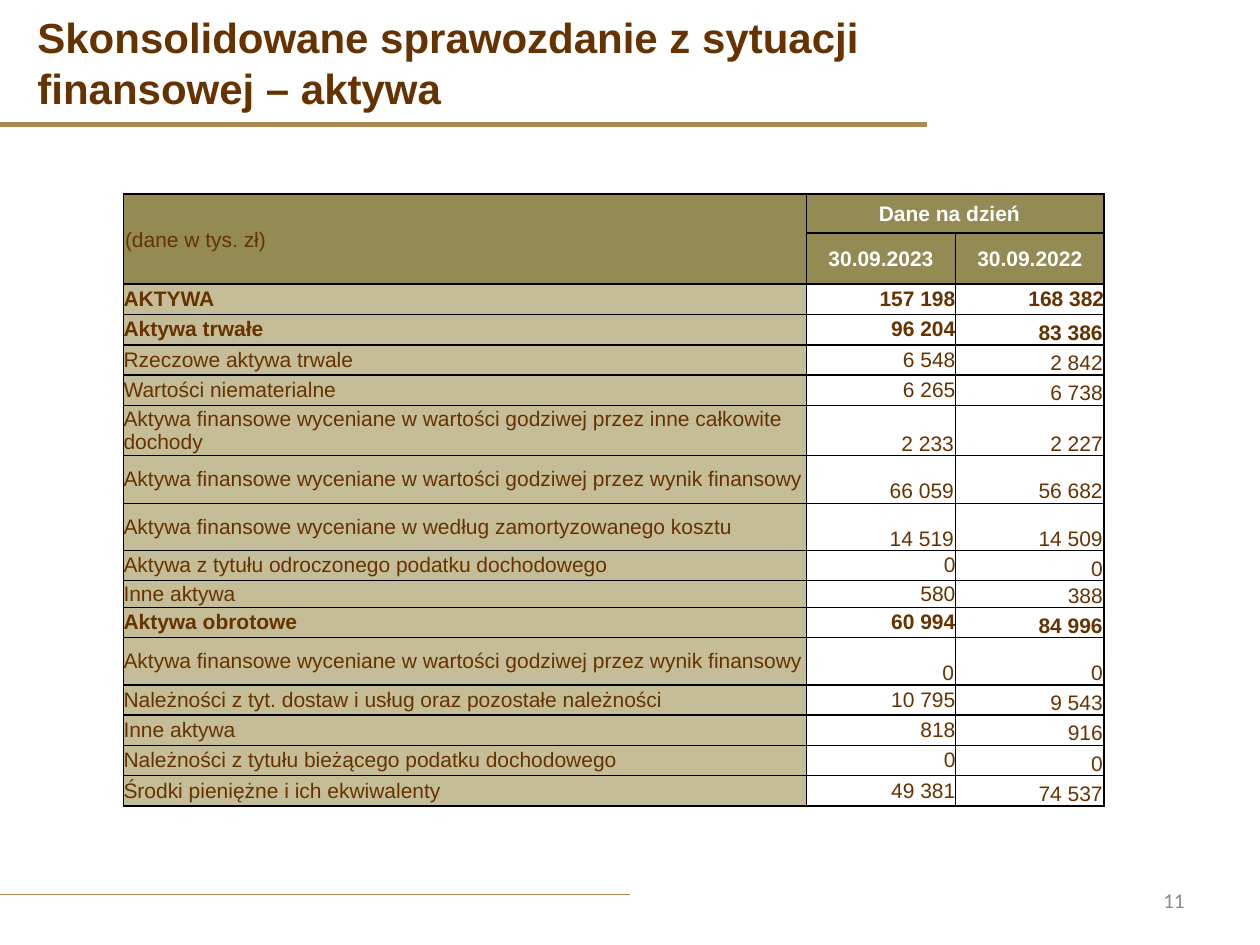
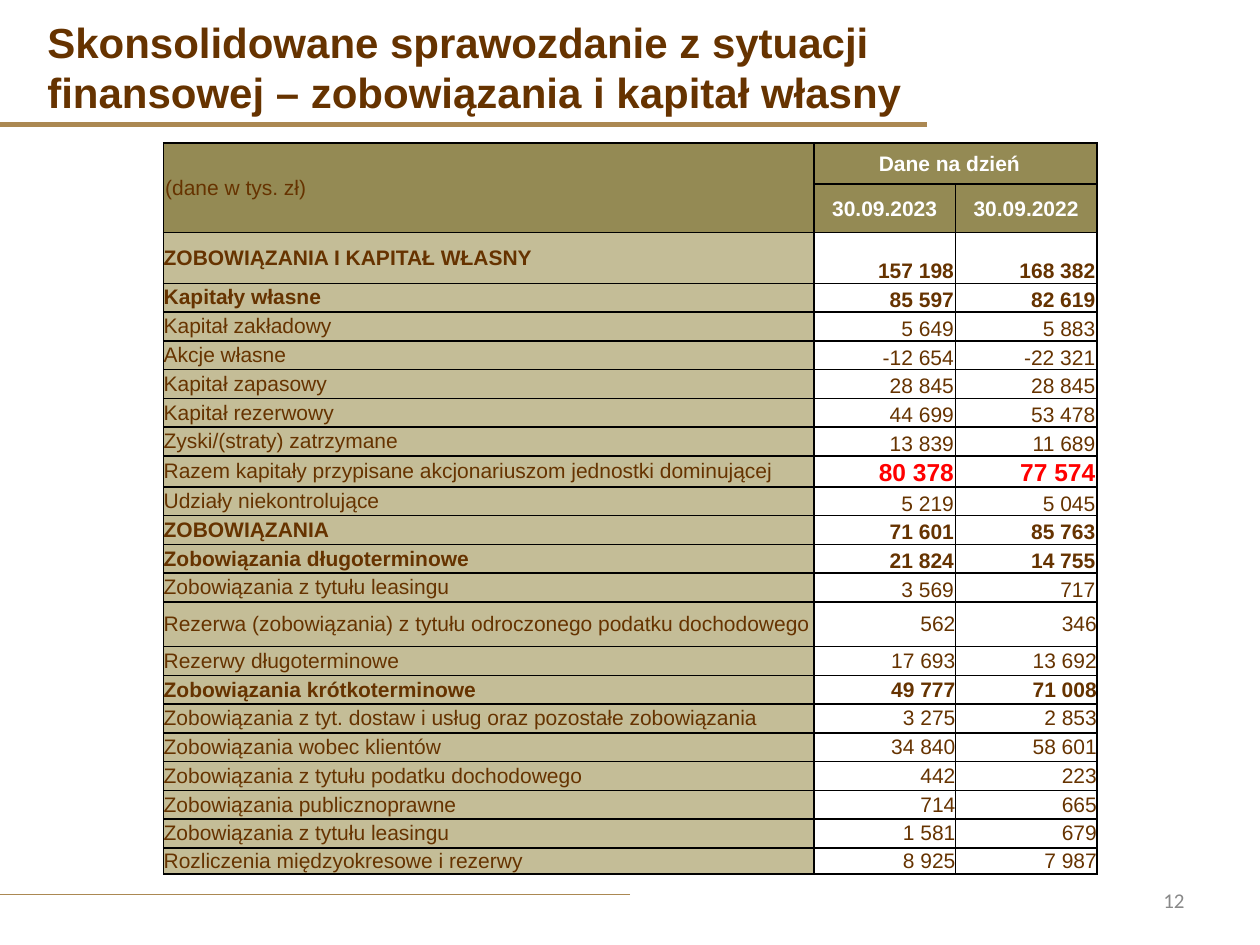
"""Build two slides with the consolidated statement of financial position."""
from dataclasses import dataclass

import pptx
import pptx.dml.color
import pptx.enum.shapes
import pptx.enum.text
import pptx.oxml
import pptx.oxml.ns
import pptx.presentation
import pptx.shapes.autoshape
import pptx.slide
import pptx.table
import pptx.text.text
import pptx.util

Cm = pptx.util.Cm
Pt = pptx.util.Pt
RGBColor = pptx.dml.color.RGBColor
Align = pptx.enum.text.PP_ALIGN
Anchor = pptx.enum.text.MSO_ANCHOR

BROWN = RGBColor(0x66, 0x33, 0x00)
GOLD = RGBColor(0xAB, 0x88, 0x52)
OLIVE = RGBColor(0x94, 0x8A, 0x54)
SAND = RGBColor(0xC4, 0xBD, 0x97)
WHITE = RGBColor(0xFF, 0xFF, 0xFF)
RED = RGBColor(0xFF, 0x00, 0x00)
GREY = RGBColor(0x89, 0x89, 0x89)
BORDER = "000000"

MIDDLE = (Anchor.MIDDLE, Anchor.MIDDLE)
BOTTOM = (Anchor.BOTTOM, Anchor.BOTTOM)
MIXED = (Anchor.MIDDLE, Anchor.BOTTOM)


@dataclass(frozen=True)
class Rule:
    """A horizontal gold line starting at the left slide edge."""
    length: float
    top: float
    weight: float


@dataclass(frozen=True)
class Item:
    """One line of the statement with its values on both dates."""
    label: str
    current: str
    previous: str
    anchors: tuple[Anchor, Anchor]
    bold: bool = False
    height: float | None = None
    highlight: bool = False


@dataclass(frozen=True)
class Statement:
    """One slide: its title, page number, table geometry and items."""
    title: str
    title_box: tuple[float, float, float, float]
    page: str
    left: float
    top: float
    column_widths: tuple[float, float, float]
    header_heights: tuple[float, float]
    item_height: float
    items: list[Item]


RULES = [Rule(18.69, 2.51, 2.5), Rule(12.7, 18.03, 1)]
DATES = ("30.09.2023", "30.09.2022")

ASSETS = Statement(
    "Skonsolidowane sprawozdanie z sytuacji finansowej – aktywa",
    (0.5, 0, 18.2, 2.51), "11", 2.49, 3.91, (13.77, 3, 3), (0.79, 1.03), 0.61,
    [
        Item("AKTYWA", "157 198", "168 382", MIDDLE, bold=True),
        Item("Aktywa trwałe", "96 204", "83 386", MIXED, bold=True),
        Item("Rzeczowe aktywa trwale", "6 548", "2 842", MIXED),
        Item("Wartości niematerialne", "6 265", "6 738", MIXED),
        Item("Aktywa finansowe wyceniane w wartości godziwej przez inne całkowite dochody",
             "2 233", "2 227", BOTTOM, height=0.96),
        Item("Aktywa finansowe wyceniane w wartości godziwej przez wynik finansowy",
             "66 059", "56 682", BOTTOM, height=0.96),
        Item("Aktywa finansowe wyceniane w według zamortyzowanego kosztu",
             "14 519", "14 509", BOTTOM, height=0.95),
        Item("Aktywa z tytułu odroczonego podatku dochodowego", "0", "0", MIXED),
        Item("Inne aktywa", "580", "388", MIXED, height=0.49),
        Item("Aktywa obrotowe", "60 994", "84 996", MIXED, bold=True),
        Item("Aktywa finansowe wyceniane w wartości godziwej przez wynik finansowy",
             "0", "0", BOTTOM, height=0.95),
        Item("Należności z tyt. dostaw i usług oraz pozostałe należności",
             "10 795", "9 543", MIXED),
        Item("Inne aktywa", "818", "916", MIXED),
        Item("Należności z tytułu bieżącego podatku dochodowego", "0", "0", MIXED),
        Item("Środki pieniężne i ich ekwiwalenty", "49 381", "74 537", MIXED),
    ])

LIABILITIES = Statement(
    "Skonsolidowane sprawozdanie z sytuacji finansowej – zobowiązania i kapitał własny",
    (0.7, 0.92, 20.47, 0.86), "12", 3.3, 2.88, (13.11, 2.85, 2.85), (0.83, 0.98), 0.58,
    [
        Item("ZOBOWIĄZANIA I KAPITAŁ WŁASNY", "157 198", "168 382", BOTTOM,
             bold=True, height=1.02),
        Item("Kapitały własne", "85 597", "82 619", BOTTOM, bold=True),
        Item("Kapitał zakładowy", "5 649", "5 883", BOTTOM),
        Item("Akcje własne", "-12 654", "-22 321", BOTTOM),
        Item("Kapitał zapasowy", "28 845", "28 845", BOTTOM),
        Item("Kapitał rezerwowy", "44 699", "53 478", BOTTOM),
        Item("Zyski/(straty) zatrzymane", "13 839", "11 689", BOTTOM),
        Item("Razem kapitały przypisane akcjonariuszom jednostki dominującej",
             "80 378", "77 574", BOTTOM, height=0.62, highlight=True),
        Item("Udziały niekontrolujące", "5 219", "5 045", BOTTOM),
        Item("ZOBOWIĄZANIA", "71 601", "85 763", BOTTOM, bold=True),
        Item("Zobowiązania długoterminowe", "21 824", "14 755", BOTTOM, bold=True),
        Item("Zobowiązania z tytułu leasingu", "3 569", "717", BOTTOM),
        Item("Rezerwa (zobowiązania) z tytułu odroczonego podatku dochodowego",
             "562", "346", MIDDLE, height=0.9),
        Item("Rezerwy długoterminowe", "17 693", "13 692", MIDDLE),
        Item("Zobowiązania krótkoterminowe", "49 777", "71 008", MIDDLE, bold=True),
        Item("Zobowiązania z tyt. dostaw i usług oraz pozostałe zobowiązania",
             "3 275", "2 853", MIDDLE),
        Item("Zobowiązania wobec klientów", "34 840", "58 601", MIDDLE),
        Item("Zobowiązania z tytułu podatku dochodowego", "442", "223", MIDDLE),
        Item("Zobowiązania publicznoprawne", "714", "665", MIDDLE),
        Item("Zobowiązania z tytułu leasingu", "1 581", "679", MIDDLE),
        Item("Rozliczenia międzyokresowe i rezerwy", "8 925", "7 987", MIDDLE, height=0.52),
    ])


def format_paragraph(paragraph: pptx.text.text._Paragraph, color: RGBColor, size: float = 12,
                     bold: bool = False, align: Align = Align.LEFT, face: str = "Arial") -> None:
    """Set the alignment and font of a paragraph."""
    paragraph.alignment = align
    font = paragraph.font
    font.name, font.size, font.bold = face, Pt(size), bold
    font.color.rgb = color


def draw_rule(slide: pptx.slide.Slide, rule: Rule) -> None:
    """Draw a gold line without a shadow."""
    line = slide.shapes.add_connector(pptx.enum.shapes.MSO_CONNECTOR.STRAIGHT,
                                      Cm(rule.length), Cm(rule.top), Cm(0), Cm(rule.top))
    line.line.color.rgb = GOLD
    line.line.width = Pt(rule.weight)
    line._element.spPr.append(pptx.oxml.parse_xml(
        f"<a:effectLst {pptx.oxml.ns.nsdecls('a')}/>"))


def draw_title(slide: pptx.slide.Slide, statement: Statement) -> None:
    """Place and format the title placeholder."""
    title = slide.shapes.title
    title.left, title.top, title.width, title.height = map(Cm, statement.title_box)
    frame = title.text_frame
    frame.text = statement.title
    frame.auto_size = pptx.enum.text.MSO_AUTO_SIZE.NONE
    frame.word_wrap = True
    frame.vertical_anchor = Anchor.MIDDLE
    format_paragraph(frame.paragraphs[0], BROWN, size=24, bold=True)


def draw_page_number(slide: pptx.slide.Slide, page: str) -> None:
    """Write the page number at the bottom right."""
    frame = slide.shapes.add_textbox(Cm(18.2), Cm(17.65), Cm(5.93), Cm(1.01)).text_frame
    frame.word_wrap = True
    frame.vertical_anchor = Anchor.MIDDLE
    frame.text = page
    format_paragraph(frame.paragraphs[0], GREY, align=Align.RIGHT, face="Calibri")


def add_borders(cell: pptx.table._Cell) -> None:
    """Give a cell thin black borders on all sides."""
    properties = cell._tc.get_or_add_tcPr()
    for position, side in enumerate(("lnL", "lnR", "lnT", "lnB")):
        properties.insert(position, pptx.oxml.parse_xml(
            f"<a:{side} {pptx.oxml.ns.nsdecls('a')} w='12700'><a:solidFill>"
            f"<a:srgbClr val='{BORDER}'/></a:solidFill></a:{side}>"))


def write_cell(cell: pptx.table._Cell, text: str, fill: RGBColor | None, color: RGBColor,
               margin: float = 0, anchor: Anchor = Anchor.MIDDLE, size: float = 12,
               bold: bool = False, align: Align = Align.LEFT) -> None:
    """Fill a cell and write its text."""
    cell.text = text
    cell.margin_left = cell.margin_right = cell.margin_top = Cm(margin)
    cell.margin_bottom = Cm(0)
    cell.vertical_anchor = anchor
    if fill is None:
        cell.fill.background()
    else:
        cell.fill.solid()
        cell.fill.fore_color.rgb = fill
    format_paragraph(cell.text_frame.paragraphs[0], color, size, bold, align)


def write_header(table: pptx.table.Table) -> None:
    """Write the two merged header rows."""
    table.cell(0, 0).merge(table.cell(1, 0))
    table.cell(0, 1).merge(table.cell(0, 2))
    write_cell(table.cell(0, 0), "(dane w tys. zł)", OLIVE, BROWN, margin=0.03)
    headings = [(0, 1, "Dane na dzień"), (1, 1, DATES[0]), (1, 2, DATES[1])]
    for row, column, heading in headings:
        write_cell(table.cell(row, column), heading, OLIVE, WHITE, margin=0.03,
                   bold=True, align=Align.CENTER)
    table.cell(0, 1).margin_right = Cm(0.27)


def write_item(table: pptx.table.Table, row: int, item: Item) -> None:
    """Write one statement line into a table row."""
    write_cell(table.cell(row, 0), item.label, SAND, BROWN, bold=item.bold)
    values = zip((item.current, item.previous), item.anchors)
    for column, (value, anchor) in enumerate(values, start=1):
        write_cell(table.cell(row, column), value, None,
                   RED if item.highlight else BROWN,
                   margin=0.03 if anchor == Anchor.BOTTOM else 0, anchor=anchor,
                   size=14 if item.highlight else 12,
                   bold=item.bold or item.highlight, align=Align.RIGHT)


def draw_table(slide: pptx.slide.Slide, statement: Statement) -> None:
    """Draw the statement table."""
    heights = [*statement.header_heights,
               *(item.height or statement.item_height for item in statement.items)]
    table = slide.shapes.add_table(
        len(heights), len(statement.column_widths), Cm(statement.left), Cm(statement.top),
        Cm(sum(statement.column_widths)), Cm(sum(heights))).table
    table.first_row = table.horz_banding = False
    for column, width in zip(table.columns, statement.column_widths):
        column.width = Cm(width)
    for row, height in zip(table.rows, heights):
        row.height = Cm(height)
    for cell in table.iter_cells():
        add_borders(cell)
    write_header(table)
    for row, item in enumerate(statement.items, start=2):
        write_item(table, row, item)


def draw_statement(deck: pptx.presentation.Presentation, statement: Statement) -> None:
    """Add one complete statement slide."""
    slide = deck.slides.add_slide(deck.slide_layouts[5])
    for rule in RULES:
        draw_rule(slide, rule)
    draw_page_number(slide, statement.page)
    draw_title(slide, statement)
    draw_table(slide, statement)


def main() -> None:
    """Build and save the presentation."""
    deck = pptx.Presentation()
    deck.slide_width, deck.slide_height = Cm(25.4), Cm(19.05)
    for statement in (ASSETS, LIABILITIES):
        draw_statement(deck, statement)
    deck.save("out.pptx")


if __name__ == "__main__":
    main()
